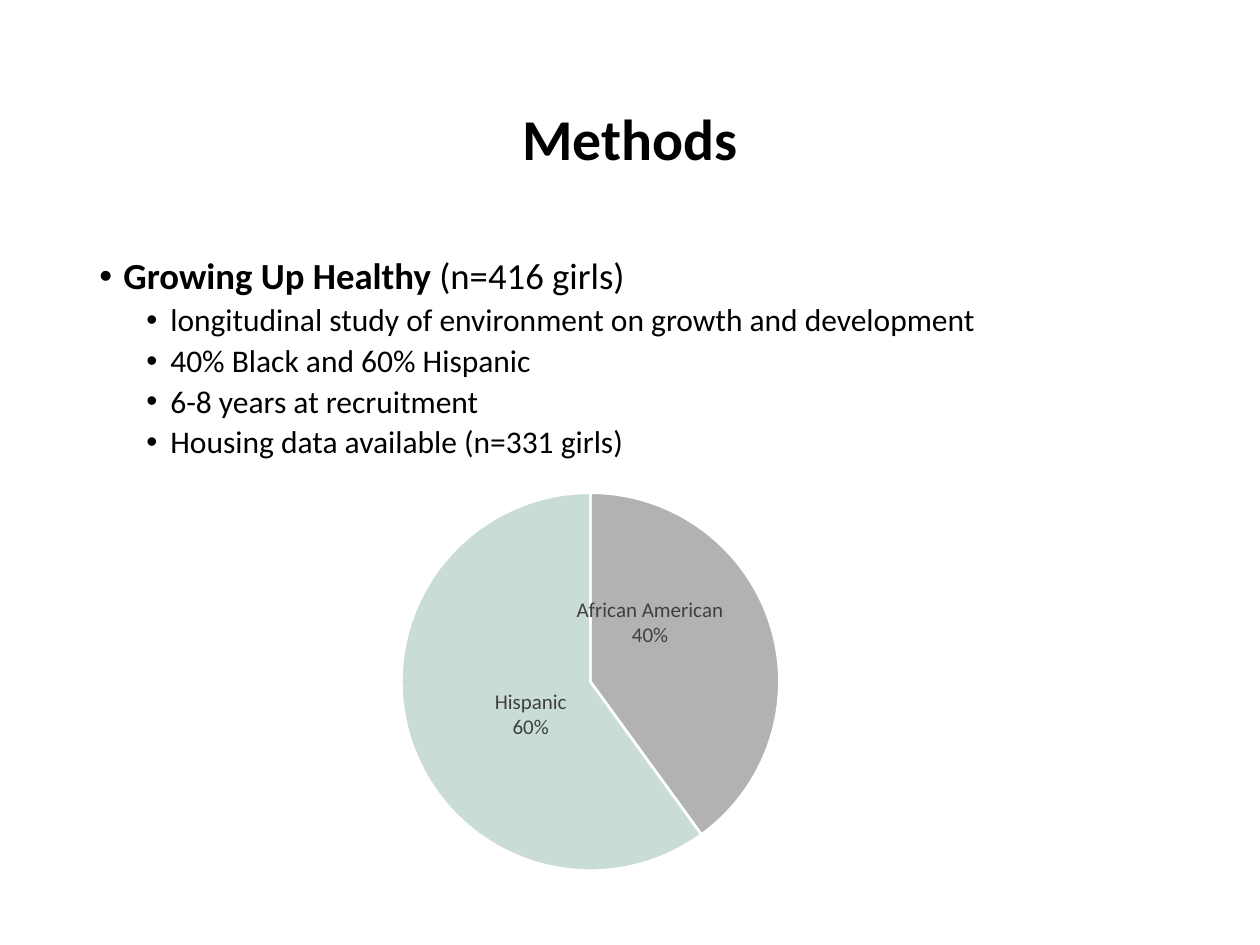
"""Build the Methods slide with its study outline and ethnicity pie chart."""
from dataclasses import dataclass

import lxml.etree
import pptx
import pptx.chart.data
import pptx.dml.color
import pptx.enum.chart
import pptx.enum.text
import pptx.oxml
import pptx.oxml.ns
import pptx.util

EMU_PER_PX = 914400 / 126
FONT = "Calibri"
BLACK = pptx.dml.color.RGBColor(0x00, 0x00, 0x00)
WHITE = pptx.dml.color.RGBColor(0xFF, 0xFF, 0xFF)
GREY = pptx.dml.color.RGBColor(0xB2, 0xB2, 0xB2)
MINT = pptx.dml.color.RGBColor(0xCA, 0xDC, 0xD8)
LABEL_GREY = pptx.dml.color.RGBColor(0x40, 0x40, 0x40)


@dataclass(frozen=True)
class Box:
    left: int
    top: int
    width: int
    height: int

    def emu(self) -> tuple:
        return tuple(px(v) for v in (self.left, self.top, self.width, self.height))


@dataclass(frozen=True)
class Bullet:
    text: str
    level: int = 1
    bold_lead: str = ""


@dataclass(frozen=True)
class Level:
    size: int
    margin: int
    space_before: float


@dataclass(frozen=True)
class Slice:
    name: str
    percent: int
    color: pptx.dml.color.RGBColor
    label_dx: float
    label_dy: float


TITLE_BOX = Box(87, 50, 1086, 183)
OUTLINE_BOX = Box(87, 252, 1086, 600)
CHART_BOX = Box(220, 462, 756, 431)
HANGING = 24
LEVELS = (Level(21, 24, 7.5), Level(18, 71, 3.8))
BULLETS = (
    Bullet("(n=416 girls)", 0, "Growing Up Healthy "),
    Bullet("longitudinal study of environment on growth and development"),
    Bullet("40% Black and 60% Hispanic"),
    Bullet("6-8 years at recruitment"),
    Bullet("Housing data available (n=331 girls)"),
)
SLICES = (
    Slice("African American", 40, GREY, -0.04, -0.07),
    Slice("Hispanic", 60, MINT, 0.04, 0.01),
)


def px(length: int) -> int:
    return round(length * EMU_PER_PX)


def style_font(font, size: float, color: pptx.dml.color.RGBColor) -> None:
    font.name = FONT
    font.size = pptx.util.Pt(size)
    font.color.rgb = color


def add_title(slide, text: str) -> None:
    frame = slide.shapes.add_textbox(*TITLE_BOX.emu()).text_frame
    frame.word_wrap = True
    frame.vertical_anchor = pptx.enum.text.MSO_ANCHOR.MIDDLE
    title = frame.paragraphs[0]
    title.text = text
    title.alignment = pptx.enum.text.PP_ALIGN.CENTER
    title.line_spacing = 0.9
    style_font(title.font, 33, BLACK)
    title.font.bold = True


def fill_bullet(paragraph, bullet: Bullet) -> None:
    level = LEVELS[bullet.level]
    paragraph.level = bullet.level
    paragraph.line_spacing = 0.9
    paragraph.space_before = pptx.util.Pt(level.space_before)
    style_font(paragraph.font, level.size, BLACK)
    if bullet.bold_lead:
        lead = paragraph.add_run()
        lead.text = bullet.bold_lead
        lead.font.bold = True
    paragraph.add_run().text = bullet.text
    properties = paragraph._p.get_or_add_pPr()
    properties.set("marL", str(px(level.margin)))
    properties.set("indent", str(-px(HANGING)))
    marks = (("a:buFont", "typeface", "Arial"), ("a:buChar", "char", "•"))
    following = properties.find(pptx.oxml.ns.qn("a:defRPr"))
    for tag, key, value in marks:
        mark = lxml.etree.Element(pptx.oxml.ns.qn(tag), {key: value})
        following.addprevious(mark)


def add_outline(slide) -> None:
    frame = slide.shapes.add_textbox(*OUTLINE_BOX.emu()).text_frame
    frame.word_wrap = True
    for index, bullet in enumerate(BULLETS):
        paragraph = frame.add_paragraph() if index else frame.paragraphs[0]
        fill_bullet(paragraph, bullet)


def manual_layout(extra: str, x: float, y: float):
    return pptx.oxml.parse_xml(
        f'<c:layout {pptx.oxml.ns.nsdecls("c")}><c:manualLayout>{extra}'
        f'<c:x val="{x}"/><c:y val="{y}"/></c:manualLayout></c:layout>'
    )


def place_plot(chart) -> None:
    plot_area = chart._chartSpace.chart.plotArea
    for old in plot_area.findall(pptx.oxml.ns.qn("c:layout")):
        plot_area.remove(old)
    modes = (
        '<c:layoutTarget val="inner"/><c:xMode val="edge"/><c:yMode val="edge"/>'
    )
    layout = manual_layout(modes, 0.24, 0.07)
    for tag, value in (("c:w", "0.5"), ("c:h", "0.88")):
        lxml.etree.SubElement(layout[0], pptx.oxml.ns.qn(tag), {"val": value})
    plot_area.insert(0, layout)


def style_slice(series, index: int, part: Slice) -> None:
    point = series.points[index]
    point.format.fill.solid()
    point.format.fill.fore_color.rgb = part.color
    point.format.line.color.rgb = WHITE
    point.format.line.width = pptx.util.Pt(1.5)
    label = point.data_label
    style_font(label.font, 12, LABEL_GREY)
    label.position = pptx.enum.chart.XL_LABEL_POSITION.CENTER
    element = label._get_or_add_dLbl()
    for tag, shown in (("showVal", "0"), ("showCatName", "1"), ("showPercent", "1")):
        element.find(pptx.oxml.ns.qn(f"c:{tag}")).set("val", shown)
    lxml.etree.SubElement(element, pptx.oxml.ns.qn("c:separator")).text = "\n"
    element.insert(1, manual_layout("", part.label_dx, part.label_dy))


def add_ethnicity_pie(slide) -> None:
    data = pptx.chart.data.CategoryChartData()
    data.categories = [part.name for part in SLICES]
    data.add_series("Series 1", [part.percent for part in SLICES])
    pie = pptx.enum.chart.XL_CHART_TYPE.PIE
    chart = slide.shapes.add_chart(pie, *CHART_BOX.emu(), data).chart
    chart.has_title = False
    chart.has_legend = False
    style_font(chart.font, 10, BLACK)
    place_plot(chart)
    plot = chart.plots[0]
    plot.vary_by_categories = True
    series = plot.series[0]
    labels = series.data_labels
    labels.show_value = False
    labels.show_category_name = True
    labels.show_percentage = True
    style_font(labels.font, 12, LABEL_GREY)
    for index, part in enumerate(SLICES):
        style_slice(series, index, part)


def main() -> None:
    presentation = pptx.Presentation()
    presentation.slide_width = px(1260)
    presentation.slide_height = px(945)
    slide = presentation.slides.add_slide(presentation.slide_layouts[6])
    add_title(slide, "Methods")
    add_outline(slide)
    add_ethnicity_pie(slide)
    presentation.save("out.pptx")


if __name__ == "__main__":
    main()
